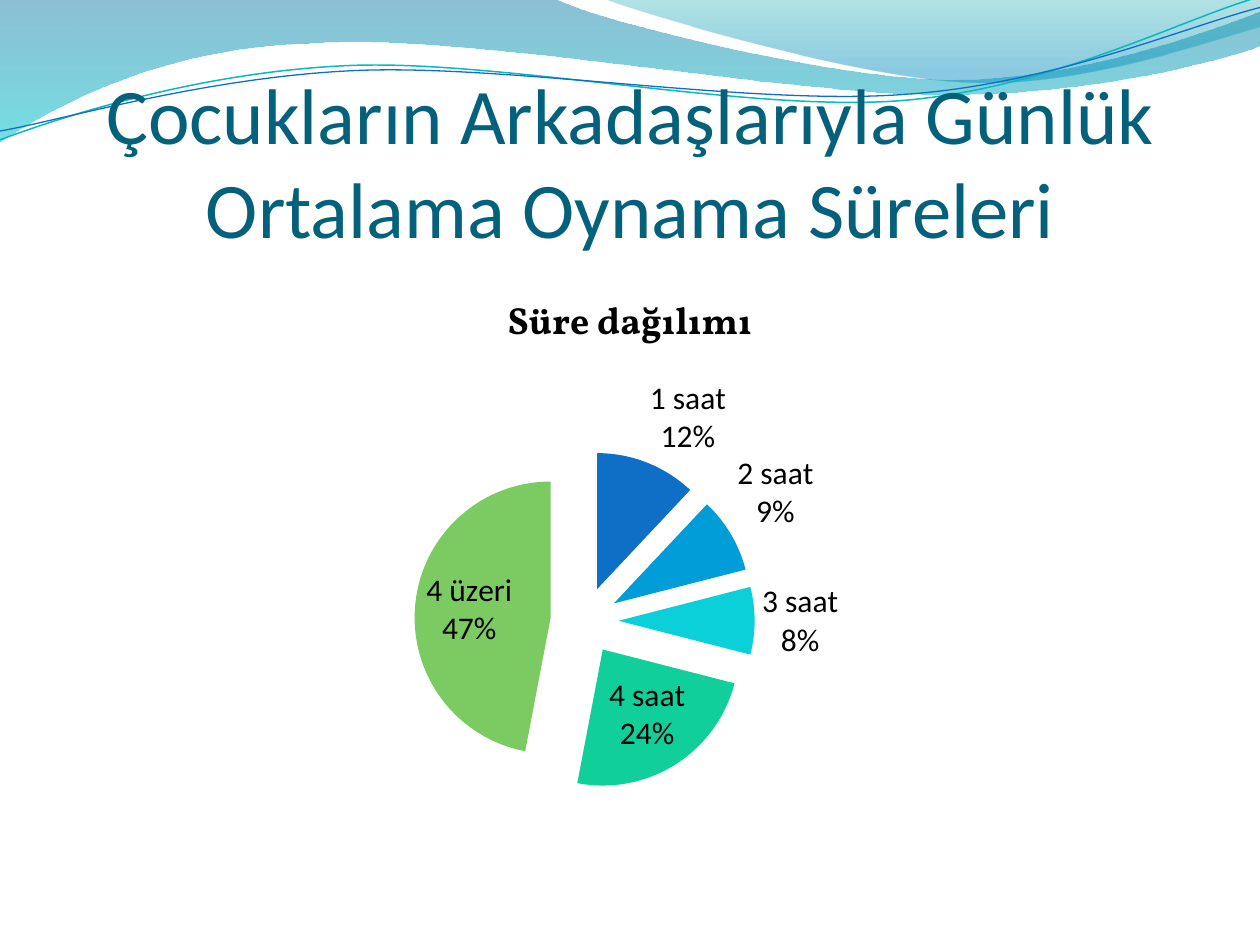
from math import cos, radians, sin

from lxml.etree import SubElement
from pptx import Presentation
from pptx.chart.data import CategoryChartData
from pptx.dml.color import RGBColor
from pptx.enum.chart import XL_CHART_TYPE as ChartType, XL_LABEL_POSITION as LabelPosition
from pptx.enum.text import MSO_ANCHOR, PP_ALIGN
from pptx.oxml import parse_xml
from pptx.oxml.ns import nsdecls, qn
from pptx.util import Inches, Pt

COLUMNS, ROWS = 10, 7.5
CELL = Inches(1)

TITLE_COLOR = RGBColor(0x04, 0x61, 0x7B)
BLACK = RGBColor(0, 0, 0)
WAVE_TEAL = RGBColor(0x0A, 0xB8, 0xBF)
WAVE_BLUE = RGBColor(0x0F, 0x6F, 0xC6)
DEEP_BLUE = RGBColor(0x00, 0x74, 0xA1)
CYAN = RGBColor(0x00, 0xC6, 0xCF)
SEA_GREEN = RGBColor(0x00, 0xA1, 0xA9)
SKY_BLUE = RGBColor(0x00, 0x8B, 0xBF)
SLICE_COLORS = [
    RGBColor(0x0F, 0x6F, 0xC6), RGBColor(0x00, 0x9D, 0xD9), RGBColor(0x0B, 0xD0, 0xD9),
    RGBColor(0x10, 0xCF, 0x9B), RGBColor(0x7C, 0xCA, 0x62),
]
DURATIONS = {"1 saat": 12, "2 saat": 9, "3 saat": 8, "4 saat": 24, "4 üzeri": 47}

# Wave outlines in tenths of the box width: a pair is a corner, six numbers a Bézier curve.
# Bands: outline and gradient stops (percent, colour, opacity percent).
BANDS = [
    ([(0, 0), (4.4, -0.01), (4.76, 0.17, 6.64, 0.63, 7.58, 0.63),
      (8.53, 0.63, 9.58, 0.26, 10, 0.09), (10.01, 0.36),
      (9.83, 0.44, 8.7, 0.76, 7.46, 0.75), (6.22, 0.75, 3.82, 0.28, 2.57, 0.34),
      (1.29, 0.36, 0.46, 0.83, -0.01, 1.13), (0, 0)],
     [(0, DEEP_BLUE, 45), (100, CYAN, 55)]),
    ([(4.79, -0.01), (5.09, 0.11, 6.82, 0.62, 7.69, 0.65),
      (8.56, 0.69, 9.61, 0.32, 10, 0.21), (10, 0), (4.79, -0.01)],
     [(0, SEA_GREEN, 30), (80, SKY_BLUE, 45)]),
]
# Strands: outline, pivot of the tilt, colour and weight.
STRAND_TILT = -2.7
STRANDS = [
    ([(0, 1.11), (0.48, 0.93, 1.58, 0.57, 2.77, 0.52),
      (3.95, 0.47, 5.93, 0.89, 7.13, 0.8), (8.33, 0.71, 9.38, 0.15, 9.98, -0.02)],
     (4.99, 0.58), WAVE_TEAL, 0.85),
    ([(0, 1.04), (0.47, 0.96, 1.64, 0.61, 2.83, 0.56),
      (4.03, 0.51, 5.97, 0.84, 7.17, 0.75), (8.36, 0.67, 9.41, 0.21, 10, 0.06)],
     (5, 0.59), WAVE_BLUE, 0.75),
]


def grid_box(column, row, columns, rows):
    return [round(count * CELL) for count in (column, row, columns, rows)]


def level(outline, pivot):
    """Turn an outline about its pivot so that the strand's tilt brings it back."""
    turn = radians(-STRAND_TILT)
    levelled = []
    for part in outline:
        turned = []
        for x, y in zip(part[::2], part[1::2]):
            dx, dy = x - pivot[0], y - pivot[1]
            turned += [pivot[0] + dx * cos(turn) - dy * sin(turn),
                       pivot[1] + dx * sin(turn) + dy * cos(turn)]
        levelled.append(turned)
    return levelled


def add_outline(page, box, outline, closed):
    """Draw a freeform through all points, then bend its curved parts."""
    left, top, width, _ = box
    points = [(left + x * width / 10, top + y * width / 10)
              for part in outline for x, y in zip(part[::2], part[1::2])]
    builder = page.shapes.build_freeform(*points[0])
    builder.add_line_segments(points[1:], close=closed)
    shape = builder.convert_to_shape()
    shape.shadow.inherit = False
    lines = iter(list(shape._element.iter(qn("a:lnTo"))))
    for part in outline[1:]:
        first = next(lines)
        if len(part) == 6:
            curve = parse_xml(f'<a:cubicBezTo {nsdecls("a")}/>')
            first.addprevious(curve)
            for line in (first, next(lines), next(lines)):
                curve.append(line[0])
                line.getparent().remove(line)
    return shape


def fill_downward(shape, stops):
    """Fill from top to bottom with partly transparent stops."""
    gradient = parse_xml(f'<a:gradFill {nsdecls("a")} rotWithShape="1"><a:gsLst/>'
                         '<a:lin ang="5400000" scaled="0"/></a:gradFill>')
    for place, color, opacity in stops:
        stop = SubElement(gradient[0], qn("a:gs"), pos=str(place * 1000))
        tint = SubElement(stop, qn("a:srgbClr"), val=str(color))
        SubElement(tint, qn("a:alpha"), val=str(opacity * 1000))
    shape.fill.background()
    no_fill = shape._element.spPr.find(qn("a:noFill"))
    no_fill.getparent().replace(no_fill, gradient)


def draw_waves(page, box):
    for outline, stops in BANDS:
        band = add_outline(page, box, outline, closed=True)
        fill_downward(band, stops)
        band.line.fill.background()
    for outline, pivot, color, weight in STRANDS:
        strand = add_outline(page, box, level(outline, pivot), closed=False)
        strand.rotation = STRAND_TILT
        strand.fill.background()
        strand.line.color.rgb = color
        strand.line.width = Pt(weight)


def set_font(font, name, size, color, bold=False):
    font.name, font.size, font.bold = name, Pt(size), bold
    font.color.rgb = color


def draw_title(page, box):
    frame = page.shapes.add_textbox(*box).text_frame
    frame.word_wrap = True
    frame.vertical_anchor = MSO_ANCHOR.BOTTOM
    frame.margin_left = frame.margin_right = frame.margin_bottom = 0
    para = frame.paragraphs[0]
    para.alignment = PP_ALIGN.CENTER
    span = para.add_run()
    span.text = "Çocukların Arkadaşlarıyla Günlük Ortalama Oynama Süreleri"
    set_font(span.font, "Calibri", 45, TITLE_COLOR)


def place_plot(chart, **shares):
    """Fix the plot area, in shares of the chart's box."""
    plot_area = chart.plots[0]._element.getparent()
    for old in plot_area.findall(qn("c:layout")):
        plot_area.remove(old)
    layout = parse_xml(f'<c:layout {nsdecls("c")}><c:manualLayout/></c:layout>')
    settings = {"layoutTarget": "inner", "xMode": "edge", "yMode": "edge", **shares}
    for tag, value in settings.items():
        SubElement(layout[0], qn(f"c:{tag}"), val=str(value))
    plot_area.insert(0, layout)


def draw_duration_pie(page, box):
    data = CategoryChartData()
    data.categories = list(DURATIONS)
    data.add_series("Series 1", list(DURATIONS.values()))
    chart = page.shapes.add_chart(ChartType.PIE, *box, data).chart
    set_font(chart.font, "Vollkorn", 18, BLACK)
    chart.has_legend = False
    chart.has_title = True
    span = chart.chart_title.text_frame.paragraphs[0].add_run()
    span.text = "Süre dağılımı"
    set_font(span.font, "Vollkorn", 21.6, BLACK, bold=True)
    place_plot(chart, x=0.31, y=0.3, w=0.3, h=0.57)

    plot = chart.plots[0]
    plot.vary_by_categories = True
    series = plot.series[0]
    explosion = parse_xml(f'<c:explosion {nsdecls("c")} val="25"/>')
    series._element.find(qn("c:cat")).addprevious(explosion)
    for index, color in enumerate(SLICE_COLORS):
        fill = series.points[index].format.fill
        fill.solid()
        fill.fore_color.rgb = color
    series._element.find(qn("c:dPt")).addprevious(explosion)

    labels = series.data_labels
    set_font(labels.font, "Calibri", 18, BLACK)
    labels.show_category_name = labels.show_percentage = True
    labels.show_value = False
    labels.position = LabelPosition.BEST_FIT
    separator = parse_xml(f'<c:separator {nsdecls("c")}>\n</c:separator>')
    labels._element.find(qn("c:showBubbleSize")).addnext(separator)


def main():
    deck = Presentation()
    deck.slide_width, deck.slide_height = round(COLUMNS * CELL), round(ROWS * CELL)
    page = deck.slides.add_slide(deck.slide_layouts[6])
    draw_waves(page, grid_box(0, 0, COLUMNS, 1.14))
    draw_title(page, grid_box(0.5, 0.77, 9, 1.25))
    draw_duration_pie(page, grid_box(0.5, 2.12, 9, 4.8))
    deck.save("out.pptx")


if __name__ == "__main__":
    main()
